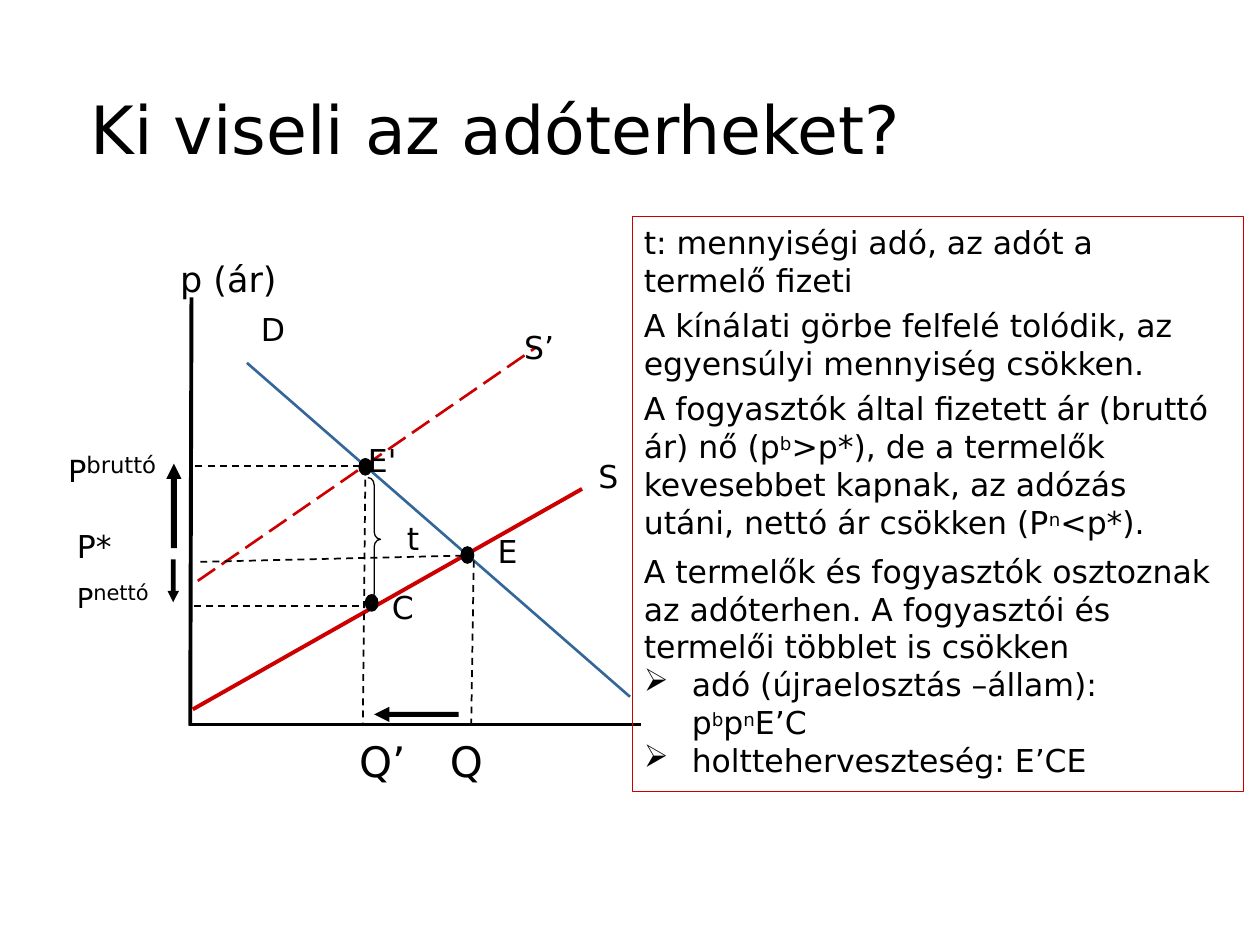
from lxml import etree
from pptx import Presentation
from pptx.dml.color import RGBColor
from pptx.enum.dml import MSO_LINE
from pptx.enum.shapes import MSO_CONNECTOR, MSO_SHAPE
from pptx.oxml.ns import qn
from pptx.util import Inches, Pt

BLACK = RGBColor(0x00, 0x00, 0x00)
RED = RGBColor(0xCC, 0x00, 0x00)
BLUE = RGBColor(0x33, 0x66, 0x99)
FONT = "DejaVu Sans"
STRAIGHT = MSO_CONNECTOR.STRAIGHT
DASH, LONG_DASH = MSO_LINE.DASH, MSO_LINE.LONG_DASH
OVAL, BRACE, FRAME = MSO_SHAPE.OVAL, MSO_SHAPE.RIGHT_BRACE, MSO_SHAPE.RECTANGLE
UP, DOWN, LEFT = MSO_SHAPE.UP_ARROW, MSO_SHAPE.DOWN_ARROW, MSO_SHAPE.LEFT_ARROW

prs = Presentation()
prs.slide_width, prs.slide_height = Inches(10), Inches(7.5)
slide = prs.slides.add_slide(prs.slide_layouts[6])


def add_text_frame(left, top, width, height):
    frame = slide.shapes.add_textbox(
        Inches(left), Inches(top), Inches(width), Inches(height)).text_frame
    frame.word_wrap = True
    for side in ("left", "top", "right", "bottom"):
        setattr(frame, f"margin_{side}", 0)
    return frame


def add_runs(paragraph, runs):
    """Add (text, size, baseline shift in percent) runs."""
    for text, size, shift in runs:
        run = paragraph.add_run()
        run.text = text
        for name, value in {"name": FONT, "size": Pt(size)}.items():
            setattr(run.font, name, value)
        run.font.color.rgb = BLACK
        if shift:
            run._r.get_or_add_rPr().set("baseline", str(shift * 1000))


title = add_text_frame(0.72, 0.7, 8.57, 0.91).paragraphs[0]
title.line_spacing = Pt(45.5)
add_runs(title, [("Ki viseli az adóterheket?", 38, 0)])

# Axes, curves and guide lines: start, end, colour, width, dash
lines = [
    (1.52, 2.36, 1.51, 5.76, BLACK, 2.25, None),
    (1.5, 5.75, 5.09, 5.75, BLACK, 2.25, None),
    (1.96, 2.88, 5, 5.53, BLUE, 1.5, None),
    (1.53, 5.63, 4.62, 3.88, RED, 2.25, None),
    (1.57, 4.61, 4.25, 2.76, RED, 1.5, LONG_DASH),
    (2.86, 3.7, 1.52, 3.7, BLACK, 1, DASH),
    (2.9, 3.71, 2.88, 5.74, BLACK, 1, DASH),
    (3.76, 4.45, 3.74, 5.75, BLACK, 1, DASH),
    (3.67, 4.41, 1.56, 4.46, BLACK, 1, DASH),
    (2.85, 4.81, 1.51, 4.81, BLACK, 1, DASH),
]
for x1, y1, x2, y2, color, width, dash in lines:
    line = slide.shapes.add_connector(
        STRAIGHT, Inches(x1), Inches(y1), Inches(x2), Inches(y2))
    line.line.color.rgb = color
    line.line.width = Pt(width)
    if dash:
        line.line.dash_style = dash
    etree.SubElement(line._element.spPr, qn("a:effectLst"))

# Shift arrows, equilibrium points, tax brace and text frame:
# kind, place, adjustments, fill, outline
shapes = [
    (UP, 1.32, 3.68, 0.12, 0.67, (0.4, 1), BLACK, None),
    (DOWN, 1.33, 4.44, 0.09, 0.34, (0.4, 1), BLACK, None),
    (LEFT, 2.97, 5.61, 0.67, 0.12, (0.33, 1), BLACK, None),
    (OVAL, 2.85, 3.64, 0.1, 0.13, (), BLACK, BLACK),
    (OVAL, 3.66, 4.34, 0.1, 0.13, (), BLACK, BLACK),
    (OVAL, 2.9, 4.72, 0.1, 0.13, (), BLACK, BLACK),
    (BRACE, 2.92, 3.79, 0.1, 0.98, (0.6, 0.5), None, BLACK),
    (FRAME, 5.02, 1.72, 4.85, 4.56, (), None, RED),
]
for kind, left, top, width, height, adjustments, fill, outline in shapes:
    shape = slide.shapes.add_shape(
        kind, Inches(left), Inches(top), Inches(width), Inches(height))
    shape.shadow.inherit = False
    for index, value in enumerate(adjustments):
        shape.adjustments[index] = value
    if fill is None:
        shape.fill.background()
    else:
        shape.fill.solid()
        shape.fill.fore_color.rgb = fill
    if outline is None:
        shape.line.fill.background()
    else:
        shape.line.color.rgb = outline
        shape.line.width = Pt(0.75)

labels = [
    ("p (ár)", 1.43, 2.04, 0.84, 0.34, 20),
    ("D", 2.07, 2.46, 0.22, 0.31, 18),
    ("S’", 4.16, 2.6, 0.27, 0.31, 18),
    ("S", 4.75, 3.63, 0.2, 0.31, 18),
    ("E'", 2.92, 3.5, 0.25, 0.31, 18),
    ("E", 3.95, 4.22, 0.19, 0.31, 18),
    ("C", 3.11, 4.67, 0.2, 0.31, 18),
    ("t", 3.23, 4.12, 0.13, 0.31, 18),
]
for text, left, top, width, height, size in labels:
    label = add_text_frame(left, top, width, height).paragraphs[0]
    add_runs(label, [(text, size, 0)])

quantities = add_text_frame(2.85, 5.84, 1.05, 0.4).paragraphs[0]
tabs = etree.SubElement(quantities._p.get_or_add_pPr(), qn("a:tabLst"))
etree.SubElement(tabs, qn("a:tab"), pos=str(Inches(0.72)), algn="l")
add_runs(quantities, [("Q’\tQ", 24, 0)])

gross_price = add_text_frame(0.54, 3.34, 0.77, 0.42).paragraphs[0]
add_runs(gross_price, [("P", 30, -17), ("bruttó", 13, 0)])

net_price = add_text_frame(0.61, 4.25, 0.61, 0.53).paragraphs[0]
net_price.line_spacing = 0.75
add_runs(net_price, [("P* ", 18, 0), ("P", 27, -17), ("nettó", 12, 0)])

# In the explanation, every second piece between bars is superscript
explanation = [
    ("t: mennyiségi adó, az adót a termelő fizeti", 0),
    ("A kínálati görbe felfelé tolódik, az egyensúlyi mennyiség csökken.", 4.3),
    ("A fogyasztók által fizetett ár (bruttó ár) nő (p|b|>p*), de a termelők "
     "kevesebbet kapnak, az adózás utáni, nettó ár csökken (P|n|<p*).", 4.3),
    ("A termelők és fogyasztók osztoznak az adóterhen. A fogyasztói és "
     "termelői többlet is csökken", 6.5),
]
bullets = [("adó (újraelosztás –állam): p|b|p|n|E’C", 0),
           ("holtteherveszteség: E’CE", 0)]
for top, height, paragraphs in ((1.77, 3.52, explanation), (5.28, 0.91, bullets)):
    bulleted = paragraphs is bullets
    body = add_text_frame(5.1 if bulleted else 5.11, top,
                          3.72 if bulleted else 4.55, height)
    for index, (text, gap) in enumerate(paragraphs):
        paragraph = body.add_paragraph() if index else body.paragraphs[0]
        if gap:
            paragraph.space_before = Pt(gap)
        if bulleted:
            properties = paragraph._p.get_or_add_pPr()
            properties.set("marL", str(Inches(0.39)))
            properties.set("indent", str(Inches(-0.38)))
            etree.SubElement(properties, qn("a:buChar"), char="➢")
        add_runs(paragraph, [(piece, 18, 25 * (part % 2))
                             for part, piece in enumerate(text.split("|"))])

prs.save("out.pptx")
